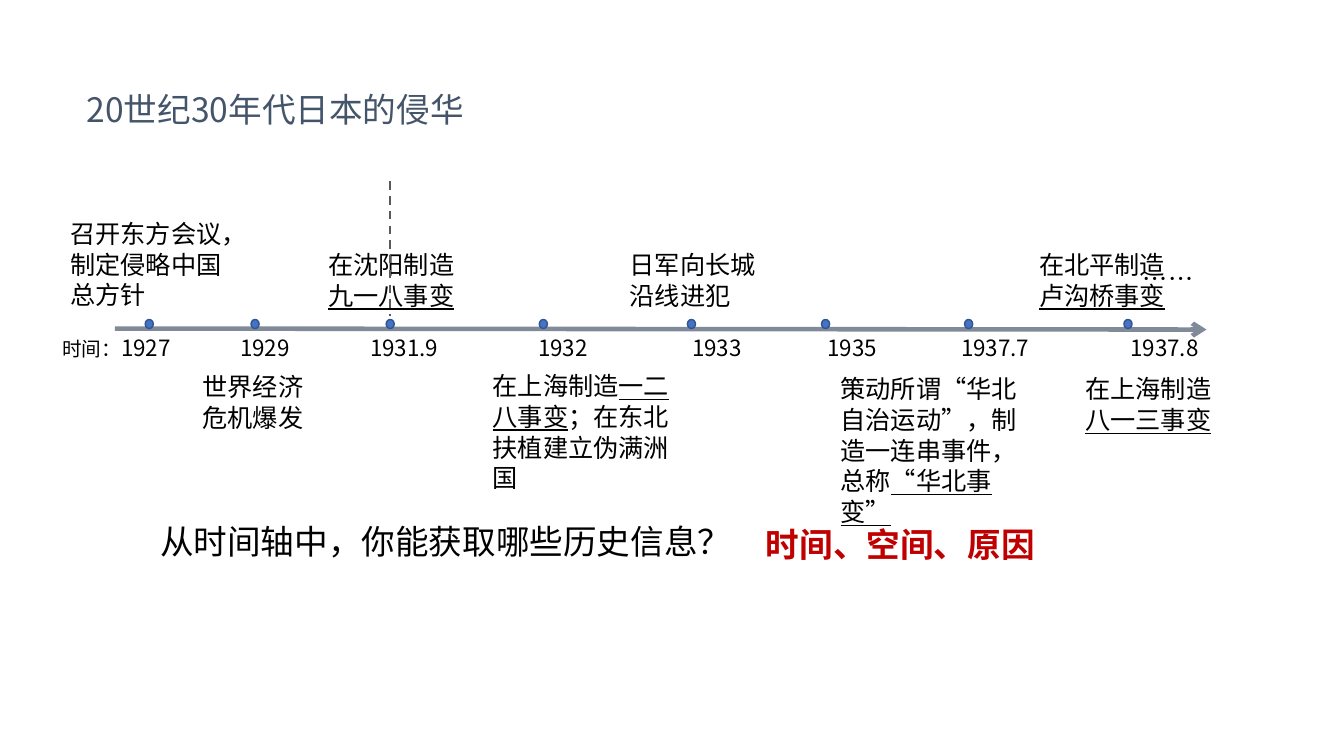
from dataclasses import dataclass

from lxml.etree import SubElement
from pptx import Presentation
from pptx.dml.color import RGBColor
from pptx.enum.dml import MSO_LINE
from pptx.enum.shapes import MSO_CONNECTOR as CONN, MSO_SHAPE as SHAPE
from pptx.enum.text import MSO_ANCHOR as ANCHOR, MSO_AUTO_SIZE as AUTO, PP_ALIGN as ALIGN
from pptx.oxml.ns import qn
from pptx.util import Pt

FONT = "Noto Sans CJK SC"


@dataclass
class Phrase:
    text: str
    underline: bool = False
    size: float = 18


@dataclass
class Note:
    left: float
    top: float
    width: float
    height: float
    phrases: list[Phrase]
    color: str = "000000"
    bold: bool = False
    spacing: float | None = 22
    tabs: tuple[float, ...] = ()


def rgb(value: str) -> RGBColor:
    return RGBColor.from_string(value)


def format_run(r, size: float, color: str, bold: bool = False) -> None:
    r.font.size = Pt(size)
    r.font.bold = bold
    r.font.name = FONT
    r.font.color.rgb = rgb(color)
    SubElement(r._r.get_or_add_rPr(), qn("a:ea"), typeface=FONT)


def place(sp, left: float, top: float, width: float, height: float) -> None:
    sp.left, sp.top, sp.width, sp.height = Pt(left), Pt(top), Pt(width), Pt(height)


def add_title(slide, text: str) -> None:
    title = slide.shapes.title
    place(title, 54.7, 63.4, 285.8, 36)
    tf = title.text_frame
    tf.text = text
    tf.word_wrap = True
    tf.auto_size = AUTO.NONE
    tf.vertical_anchor = ANCHOR.TOP
    p = tf.paragraphs[0]
    p.alignment = ALIGN.LEFT
    p.line_spacing = 0.9
    format_run(p.runs[0], 24, "44546A")


def add_note(slide, note: Note) -> None:
    sp = slide.shapes.add_textbox(Pt(note.left), Pt(note.top), Pt(note.width), Pt(note.height))
    tf = sp.text_frame
    tf.word_wrap = True
    p = tf.paragraphs[0]
    if note.spacing:
        p.line_spacing = Pt(note.spacing)
    if note.tabs:
        tab_list = SubElement(p._p.get_or_add_pPr(), qn("a:tabLst"))
        for pos in note.tabs:
            SubElement(tab_list, qn("a:tab"), pos=str(Pt(pos)), algn="l")
    for phrase in note.phrases:
        r = p.add_run()
        r.text = phrase.text
        format_run(r, phrase.size, note.color, note.bold)
        if phrase.underline:
            r.font.underline = True


def add_line(slide, x1: float, y1: float, x2: float, y2: float, color: str, width: float):
    line = slide.shapes.add_connector(CONN.STRAIGHT, Pt(x1), Pt(y1), Pt(x2), Pt(y2))
    line.line.color.rgb = rgb(color)
    line.line.width = Pt(width)
    SubElement(line._element.spPr, qn("a:effectLst"))
    return line


def add_axis(slide) -> None:
    axis = add_line(slide, 82.1, 234.7, 861.8, 235.4, "44546A", 3.25)
    ln = axis.line._get_or_add_ln()
    SubElement(ln.find(".//" + qn("a:srgbClr")), qn("a:alpha"), val="68000")
    SubElement(ln, qn("a:tailEnd"), type="arrow")


def add_marker(slide, left: float) -> None:
    dot = slide.shapes.add_shape(SHAPE.OVAL, Pt(left), Pt(228.2), Pt(5.8), Pt(6.5))
    dot.shadow.inherit = False
    dot.fill.solid()
    dot.fill.fore_color.rgb = rgb("4472C4")
    dot.line.color.rgb = rgb("325491")
    dot.line.width = Pt(1)


MARKERS = (103.7, 179.3, 275.8, 385.2, 491, 586.8, 689, 802.8)
YEARS = ("1927", "1929", "1931.9", "1932", "1933", "1935", "1937.7", "1937.8")
YEAR_TABS = (127, 220, 340, 450, 546.5, 642, 763)

NOTES = [
    Note(37.4, 235.4, 868.3, 26.6, [Phrase("时间：", size=14), Phrase("\t".join(YEARS), size=16)],
         spacing=None, tabs=YEAR_TABS),
    Note(43.2, 151.9, 126.7, 49, [Phrase("召开东方会议，制定侵略中国总方针")]),
    Note(227.5, 174.2, 108, 38.9, [Phrase("在沈阳制造"), Phrase("九一八事变", True)]),
    Note(442.8, 174.2, 113, 38.9, [Phrase("日军向长城沿线进犯")]),
    Note(735.1, 174.2, 108.7, 38.9, [Phrase("在北平制造"), Phrase("卢沟桥事变", True)]),
    Note(137.5, 261.4, 90, 38.9, [Phrase("世界经济危机爆发")]),
    Note(344.9, 260.6, 146.2, 50.4,
         [Phrase("在上海制造"), Phrase("一二八事变", True), Phrase("；在东北扶植建立伪满洲国")]),
    Note(593.3, 262.8, 145.4, 38.9,
         [Phrase("策动所谓“华北自治运动”，制造一连串事件，总称"), Phrase("“华北事变”", True)]),
    Note(768.2, 262.8, 105.8, 38.9, [Phrase("在上海制造"), Phrase("八一三事变", True)]),
    Note(107.3, 368.6, 600.5, 58.3, [Phrase("从时间轴中，你能获取哪些历史信息？", size=24)],
         spacing=None),
    Note(809.3, 184.3, 64.8, 28.8, [Phrase("……")], spacing=None),
    Note(540, 370.8, 238.3, 36, [Phrase("时间、空间、原因", size=24)],
         color="C00000", bold=True, spacing=None),
]


def main() -> None:
    prs = Presentation()
    prs.slide_width, prs.slide_height = Pt(960), Pt(540)
    slide = prs.slides.add_slide(prs.slide_layouts[5])
    add_title(slide, "20世纪30年代日本的侵华")
    add_axis(slide)
    for left in MARKERS:
        add_marker(slide, left)
    for note in NOTES:
        add_note(slide, note)
    divider = add_line(slide, 278.6, 129.6, 278.6, 225.4, "595959", 1.5)
    divider.line.dash_style = MSO_LINE.DASH
    prs.save("out.pptx")


if __name__ == "__main__":
    main()
